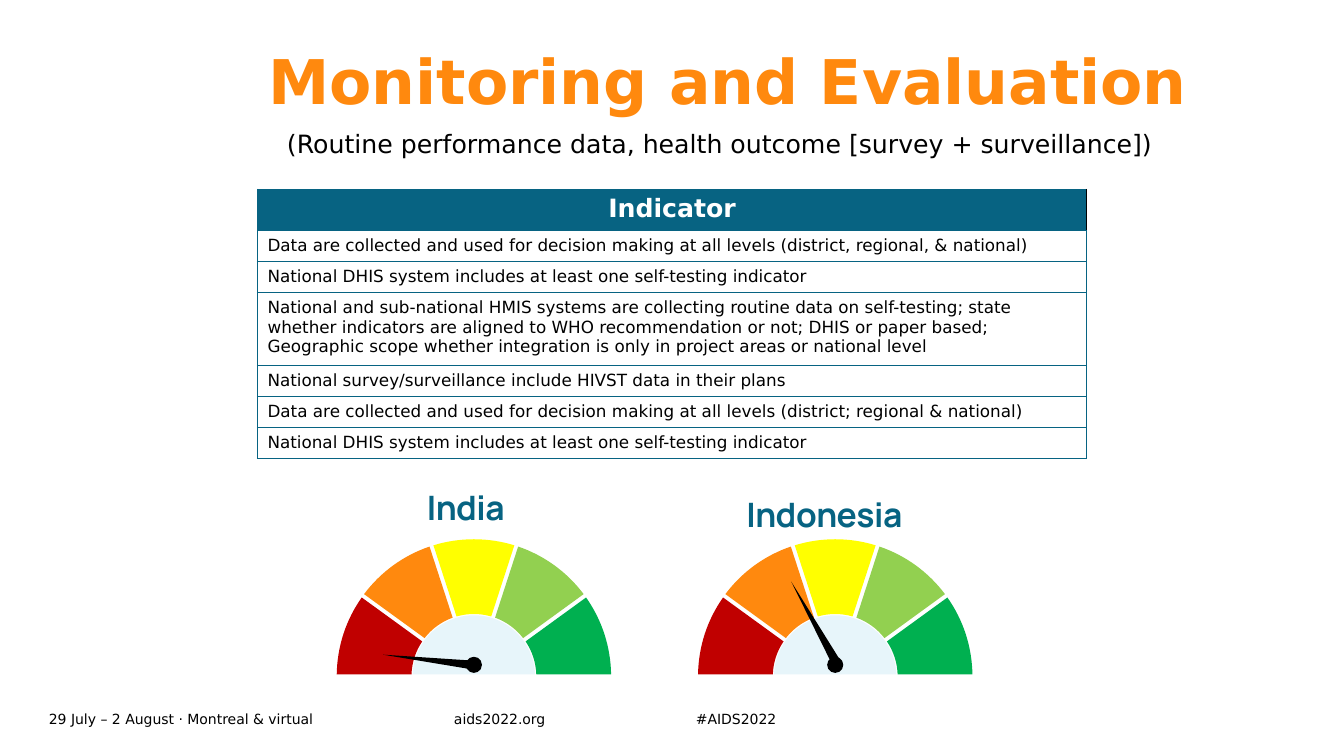
import math
from dataclasses import dataclass

import lxml.etree
import pptx
import pptx.dml.color
import pptx.enum.shapes
import pptx.enum.text
import pptx.oxml.ns
import pptx.util

Pt = pptx.util.Pt
Align = pptx.enum.text.PP_ALIGN
Anchor = pptx.enum.text.MSO_ANCHOR
Kind = pptx.enum.shapes.MSO_SHAPE
qn = pptx.oxml.ns.qn


@dataclass(frozen=True)
class Theme:
    sans: str = "DejaVu Sans"
    brand: str = "Manrope"
    ink: str = "000000"
    paper: str = "FFFFFF"
    teal: str = "076382"
    orange: str = "FF890E"
    dial: str = "E7F5FA"
    bands: tuple = ("C00000", "FF890E", "FFFF00", "92D050", "00B050")
    title: int = 44
    name: int = 24
    lead: int = 18
    body: int = 12
    foot: int = 10


THEME = Theme()

ROWS = [
    ("Indicator", 29.5),
    ("Data are collected and used for decision making at all levels "
     "(district, regional, & national)", 22.2),
    ("National DHIS system includes at least one self-testing indicator", 22.2),
    ("National and sub-national HMIS systems are collecting routine data on "
     "self-testing; state whether indicators are aligned to WHO recommendation "
     "or not; DHIS or paper based; Geographic scope whether integration is only "
     "in project areas or national level", 52),
    ("National survey/surveillance include HIVST data in their plans", 22.2),
    ("Data are collected and used for decision making at all levels "
     "(district; regional & national)", 22.2),
    ("National DHIS system includes at least one self-testing indicator", 22.2),
]
FOOT = [  # text, offset, width
    ("29 July – 2 August · Montreal & virtual", 0, 289.4),
    ("aids2022.org", 289.4, 139),
    ("#AIDS2022", 462.2, 139),
]


def rgb(code):
    return pptx.dml.color.RGBColor.from_string(code)


def style(para, size, color, font=THEME.sans, bold=False, align=Align.LEFT):
    para.alignment = align
    face = para.font
    face.name, face.size, face.bold = font, Pt(size), bold
    face.color.rgb = rgb(color)


def label(slide, box, text, size, color, anchor=Anchor.TOP, inset=None, **look):
    """Add a one-paragraph text box and return its paragraph."""
    frame = slide.shapes.add_textbox(*map(Pt, box)).text_frame
    frame.word_wrap = True
    frame.vertical_anchor = anchor
    if inset is not None:
        frame.margin_left = frame.margin_right = Pt(inset)
        frame.margin_top = frame.margin_bottom = Pt(inset)
    para = frame.paragraphs[0]
    para.text = text
    style(para, size, color, **look)
    return para


def header(slide, box):
    left, top, width, height = box
    para = label(slide, box, "Monitoring and Evaluation", THEME.title,
                 THEME.orange, inset=0, bold=True)
    para.line_spacing = 0.9
    label(slide, (left - 4.6, top + 51.1, 654.5, 29),
          "(Routine performance data, health outcome [survey + surveillance])",
          THEME.lead, THEME.ink, align=Align.CENTER)


def border(cell, side, color, width):
    line = lxml.etree.SubElement(cell._tc.get_or_add_tcPr(), qn("a:ln" + side),
                                 w=str(Pt(width)))
    fill = lxml.etree.SubElement(line, qn("a:solidFill"))
    lxml.etree.SubElement(fill, qn("a:srgbClr"), val=color)


def table(slide, box):
    grid = slide.shapes.add_table(len(ROWS), 1, *map(Pt, box)).table
    grid.horz_banding = False
    for index, (text, height) in enumerate(ROWS):
        head = index == 0
        grid.rows[index].height = Pt(height)
        cell = grid.cell(index, 0)
        for side in "LRTB":
            color = THEME.ink if head and side == "R" else THEME.teal
            border(cell, side, color, 0.5 if head and side in "LT" else 1)
        cell.fill.solid()
        cell.fill.fore_color.rgb = rgb(THEME.teal if head else THEME.paper)
        cell.text = text
        para = cell.text_frame.paragraphs[0]
        if head:
            style(para, THEME.lead, THEME.paper, bold=True, align=Align.CENTER)
        else:
            style(para, THEME.body, THEME.ink)


def paint(shape, color):
    shape.shadow.inherit = False
    shape.fill.solid()
    shape.fill.fore_color.rgb = rgb(color)
    shape.line.fill.background()


def arc(x, y, radius, start, end):
    """Return the start point and two Bezier curves, each (control, control, end)."""
    half = (end - start) / 2
    pull = 4 / 3 * math.tan(half / 4)

    def spot(turn, lean):
        across = math.cos(turn) - lean * math.sin(turn)
        up = math.sin(turn) + lean * math.cos(turn)
        return Pt(x - radius * across), Pt(y - radius * up)

    curves = [(spot(turn, pull), spot(turn + half, -pull), spot(turn + half, 0))
              for turn in (start, start + half)]
    return spot(start, 0), curves


def bend(shape, index, curve):
    """Turn one straight segment of a freeform into a Bezier curve."""
    line = shape._element.findall(".//" + qn("a:lnTo"))[index]
    line.tag = qn("a:cubicBezTo")
    line.clear()
    for x, y in curve:
        lxml.etree.SubElement(line, qn("a:pt"), x=str(x - shape.left),
                              y=str(y - shape.top))


def sector(group, x, y, outer, inner, start, end, color, gap=1.45):
    """Draw a ring sector kept `gap` clear of its sides; inner 0 makes a dome."""
    trim = math.asin(gap / outer)
    first, curves = arc(x, y, outer, start + trim, end - trim)
    steps = list(curves)
    if inner:
        trim = math.asin(gap / inner)
        corner, curves = arc(x, y, inner, end - trim, start + trim)
        steps += [(corner,), *curves]
    path = group.shapes.build_freeform(*first)
    path.add_line_segments([step[-1] for step in steps], close=True)
    shape = path.convert_to_shape()
    for index in reversed(range(len(steps))):
        if len(steps[index]) == 3:
            bend(shape, index, steps[index])
    paint(shape, color)


def gauge(slide, box, turn, shift):
    """Draw a half-circle gauge; `shift` runs from hub to needle centre."""
    left, top, width, height = box
    outer = width / 2
    x, y = left + outer, top + outer
    group = slide.shapes.add_group_shape()
    sweep = math.pi / len(THEME.bands)
    for index, color in enumerate(THEME.bands):
        sector(group, x, y, outer, 44.6, index * sweep, (index + 1) * sweep, color)
    sector(group, x, y, 43.7, 0, 0, math.pi, THEME.dial)
    hub = top + height - 6.8
    parts = [(Kind.ISOSCELES_TRIANGLE, x + shift[0], hub + shift[1], 6.5, 66.2, turn),
             (Kind.OVAL, x, hub, 11.5, 11.5, 0)]
    for kind, mid, level, wide, tall, angle in parts:
        part = group.shapes.add_shape(kind, Pt(mid - wide / 2), Pt(level - tall / 2),
                                      Pt(wide), Pt(tall))
        part.rotation = angle
        paint(part, THEME.ink)


def country(slide, box, name, nudge, turn, shift):
    """Place a country name above its gauge."""
    left, top, width, height = box
    para = label(slide, (left + nudge[0], top + nudge[1], 183, 36), name,
                 THEME.name, THEME.teal, anchor=Anchor.BOTTOM, font=THEME.brand,
                 bold=True, align=Align.CENTER)
    para.runs[0]._r.get_or_add_rPr().set("spc", "-30")
    gauge(slide, (left, top + 41, width, height - 41), turn, shift)


def footer(slide, box):
    left, top, width, height = box
    for text, offset, wide in FOOT:
        label(slide, (left + offset, top, wide, height), text, THEME.foot,
              THEME.ink, anchor=Anchor.MIDDLE, inset=0)


def main():
    deck = pptx.Presentation()
    deck.slide_width, deck.slide_height = Pt(960), Pt(540)
    slide = deck.slides.add_slide(deck.slide_layouts[6])
    footer(slide, (34.9, 505.1, 601.2, 17.3))
    header(slide, (191.5, 36.7, 725, 96.5))
    table(slide, (183.9, 135.2, 592.4, 192.5))
    country(slide, (240.5, 344.2, 196, 137.5), "India", (0.7, 0), 276.6, (-32, -3.5))
    country(slide, (498.6, 344.2, 196, 137.5), "Indonesia", (-1.2, 5), 330.9,
            (-15.3, -30.5))
    deck.save("out.pptx")


if __name__ == "__main__":
    main()
